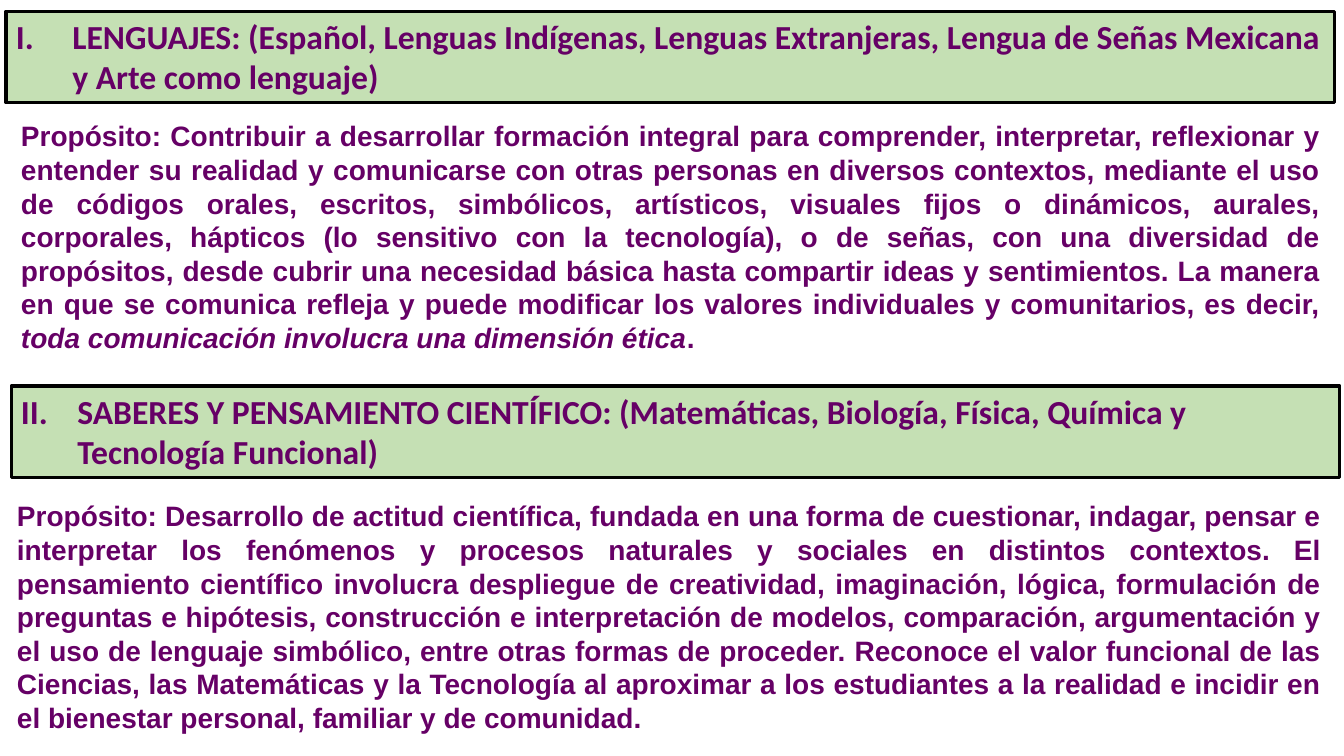
from lxml.etree import SubElement
from pptx import Presentation
from pptx.dml.color import RGBColor
from pptx.enum.shapes import MSO_SHAPE as Shape
from pptx.enum.text import MSO_ANCHOR as Anchor, MSO_AUTO_SIZE as AutoSize, PP_ALIGN as Align
from pptx.oxml.ns import qn
from pptx.util import Inches, Pt

COLORS = {"text": "660066", "band": "C5E0B4", "border": "000000"}
HEADING_WIDTH, HEADING_HEIGHT = 13.18, 0.91
PURPOSE_HEIGHT = 2.46
NUMBER_INDENT = Inches(0.56)

# Each field: heading and its position, purpose runs (text, italic) and their position
FIELDS = [
    {
        "heading": "LENGUAJES: (Español, Lenguas Indígenas, Lenguas Extranjeras, "
                   "Lengua de Señas Mexicana y Arte como lenguaje)",
        "heading_at": (0.06, 0.11),
        "purpose": [
            ("Propósito: Contribuir a desarrollar formación integral para comprender, "
             "interpretar, reflexionar y entender su realidad y comunicarse con otras "
             "personas en diversos contextos, mediante el uso de códigos orales, escritos, "
             "simbólicos, artísticos, visuales fijos o dinámicos, aurales, corporales, "
             "hápticos (lo sensitivo con la tecnología), o de señas, con una diversidad de "
             "propósitos, desde cubrir una necesidad básica hasta compartir ideas y "
             "sentimientos. La manera en que se comunica refleja y puede modificar los "
             "valores individuales y comunitarios, es decir, ", False),
            ("toda comunicación involucra una dimensión ética", True),
            (". ", False),
        ],
        "purpose_at": (0.11, 1.13),
        "purpose_width": 13.09,
    },
    {
        "heading": "SABERES Y PENSAMIENTO CIENTÍFICO: (Matemáticas, Biología, Física, "
                   "Química y Tecnología Funcional)",
        "heading_at": (0.11, 3.83),
        "purpose": [
            ("Propósito: Desarrollo de actitud científica, fundada en una forma de "
             "cuestionar, indagar, pensar e interpretar los fenómenos y procesos naturales "
             "y sociales en distintos contextos. El pensamiento científico involucra "
             "despliegue de creatividad, imaginación, lógica, formulación de preguntas e "
             "hipótesis, construcción e interpretación de modelos, comparación, "
             "argumentación y el uso de lenguaje simbólico, entre otras formas de proceder. "
             "Reconoce el valor funcional de las Ciencias, las Matemáticas y la Tecnología "
             "al aproximar a los estudiantes a la realidad e incidir en el bienestar "
             "personal, familiar y de comunidad.", False),
        ],
        "purpose_at": (0.07, 4.9),
        "purpose_width": 13.14,
    },
]


def color(name):
    return RGBColor.from_string(COLORS[name])


def style_text(shape, alignment, font_name, size):
    frame = shape.text_frame
    frame.word_wrap = True
    frame.auto_size = AutoSize.SHAPE_TO_FIT_TEXT
    frame.vertical_anchor = Anchor.TOP
    paragraph = frame.paragraphs[0]
    paragraph.alignment = alignment
    font = paragraph.font
    font.name, font.size, font.bold = font_name, Pt(size), True
    font.color.rgb = color("text")


presentation = Presentation()
presentation.slide_width, presentation.slide_height = Inches(13.33), Inches(7.5)
slide = presentation.slides.add_slide(presentation.slide_layouts[6])

for number, field in enumerate(FIELDS, start=1):
    # Green heading band with a Roman numeral
    left, top = map(Inches, field["heading_at"])
    band = slide.shapes.add_shape(Shape.RECTANGLE, left, top,
                                  Inches(HEADING_WIDTH), Inches(HEADING_HEIGHT))
    band.shadow.inherit = False
    band.fill.solid()
    band.fill.fore_color.rgb = color("band")
    band.line.color.rgb = color("border")
    band.line.width = Pt(2.25)
    paragraph = band.text_frame.paragraphs[0]
    paragraph.add_run().text = field["heading"]
    properties = paragraph._p.get_or_add_pPr()
    properties.set("marL", str(NUMBER_INDENT))
    properties.set("indent", str(-NUMBER_INDENT))
    SubElement(properties, qn("a:buAutoNum"), type="romanUcPeriod", startAt=str(number))
    style_text(band, Align.LEFT, "Calibri", 24)

    # Justified statement of purpose
    left, top = map(Inches, field["purpose_at"])
    purpose = slide.shapes.add_textbox(left, top, Inches(field["purpose_width"]),
                                       Inches(PURPOSE_HEIGHT))
    for text, italic in field["purpose"]:
        run = purpose.text_frame.paragraphs[0].add_run()
        run.text = text
        run.font.italic = italic
    style_text(purpose, Align.JUSTIFY, "Arial", 20)

presentation.save("out.pptx")
